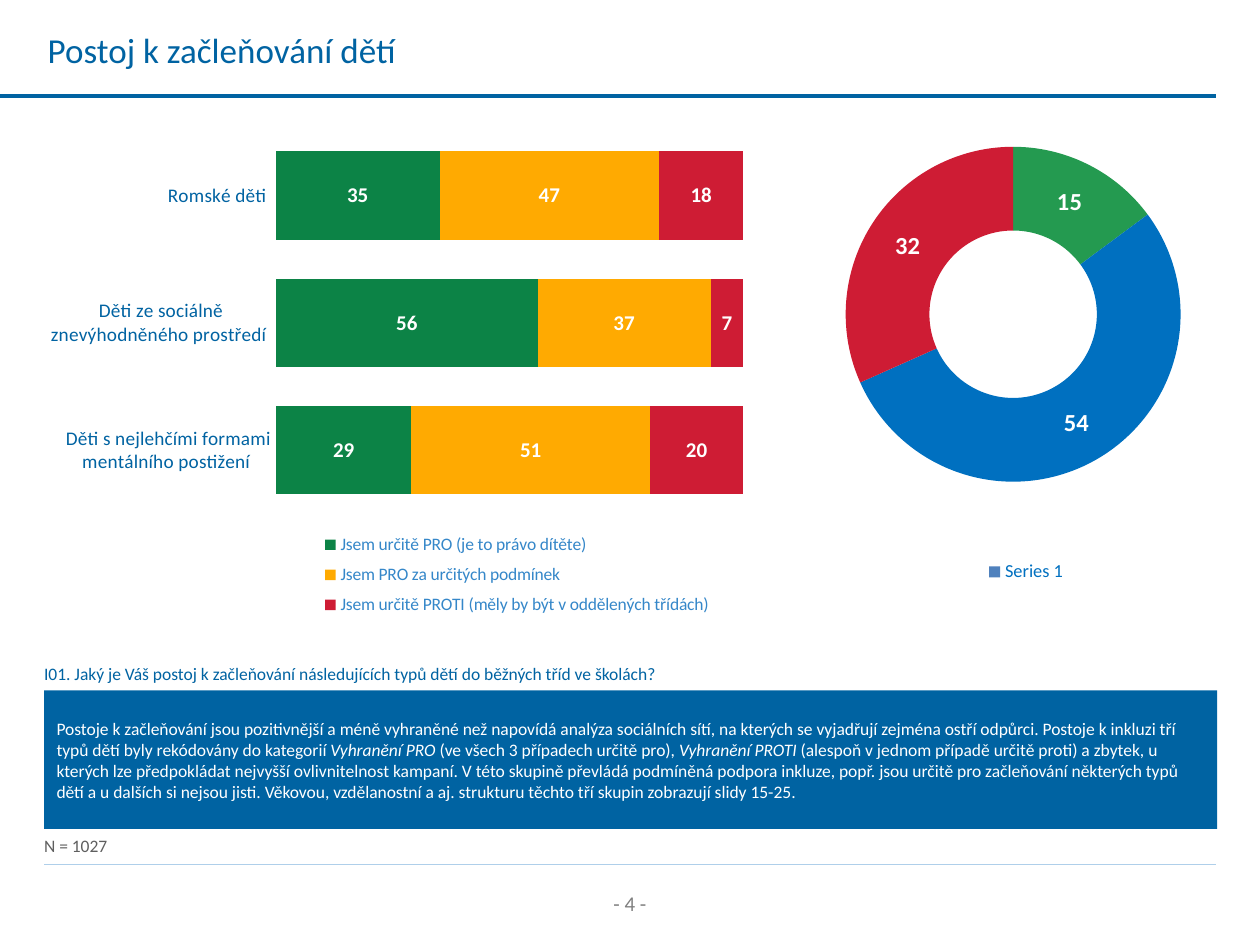
from pptx import Presentation
from pptx.chart.data import CategoryChartData
from pptx.dml.color import RGBColor
from pptx.enum.chart import XL_CHART_TYPE, XL_LABEL_POSITION, XL_LEGEND_POSITION, XL_TICK_MARK
from pptx.enum.shapes import MSO_CONNECTOR, MSO_SHAPE
from pptx.enum.text import MSO_ANCHOR, PP_ALIGN
from pptx.oxml import parse_xml
from pptx.oxml.ns import nsdecls, qn
from pptx.util import Inches, Pt

NAVY = RGBColor(0x00, 0x63, 0xA2)
PALE = RGBColor(0xAF, 0xCF, 0xEA)
SKY = RGBColor(0x35, 0x87, 0xC9)
BLUE = RGBColor(0x00, 0x70, 0xC0)
GREEN = RGBColor(0x0C, 0x83, 0x46)
LIME = RGBColor(0x24, 0x9A, 0x50)
AMBER = RGBColor(0xFF, 0xAA, 0x01)
RED = RGBColor(0xCE, 0x1C, 0x34)
GREY = RGBColor(0x80, 0x80, 0x80)
DARK = RGBColor(0x5F, 0x5F, 0x5F)
WHITE = RGBColor(0xFF, 0xFF, 0xFF)


def write(shape, runs, size, color, align=PP_ALIGN.LEFT, anchor=MSO_ANCHOR.TOP, left=0.1):
    """Fill a shape with one paragraph of (text, italic) runs."""
    frame = shape.text_frame
    frame.word_wrap = True
    frame.vertical_anchor = anchor
    frame.margin_left = Inches(left)
    para = frame.paragraphs[0]
    para.alignment = align
    for text, slant in runs:
        run = para.add_run()
        run.text = text
        font = run.font
        font.name, font.size, font.italic = "Calibri", Pt(size), slant
        font.color.rgb = color


def style(chart, plot_box, key_box, key_size, key_color, label_size):
    """Set fonts, legend, value labels and the inner layout of a chart."""
    chart.has_title = False
    chart.has_legend = True
    legend, plot = chart.legend, chart.plots[0]
    legend.position = XL_LEGEND_POSITION.BOTTOM
    legend.include_in_layout = False
    plot.vary_by_categories = False
    plot.has_data_labels = True
    labels = plot.data_labels
    labels.show_value = True
    labels.number_format = "#,##0"
    labels.number_format_is_linked = False
    for font, size, color, bold in (
        (chart.font, 18, DARK, False),
        (legend.font, key_size, key_color, False),
        (labels.font, label_size, WHITE, True),
    ):
        font.name, font.size, font.bold = "Calibri", Pt(size), bold
        font.color.rgb = color
    root = chart.element if hasattr(chart, "element") else chart._chartSpace
    for tag, spot, box in (("c:plotArea", 0, plot_box), ("c:legend", 1, key_box)):
        part = next(root.iter(qn(tag)))
        for old in part.findall(qn("c:layout")):
            part.remove(old)
        target = '<c:layoutTarget val="inner"/>' if spot == 0 else ""
        modes = '<c:xMode val="edge"/><c:yMode val="edge"/>'
        sizes = "".join(f'<c:{k} val="{v}"/>' for k, v in zip("xywh", box))
        part.insert(spot, parse_xml(
            f'<c:layout {nsdecls("c")}><c:manualLayout>{target}{modes}{sizes}'
            "</c:manualLayout></c:layout>"))


deck = Presentation()
deck.slide_width, deck.slide_height = Inches(10), Inches(7.5)
slide = deck.slides.add_slide(deck.slide_layouts[6])
shapes = slide.shapes

# Rules under the title and above the page number
for x, y, color, width in ((0.35, 6.86, PALE, 0.5), (0, 0.76, NAVY, 2.25)):
    rule = shapes.add_connector(
        MSO_CONNECTOR.STRAIGHT, Inches(x), Inches(y), Inches(9.65), Inches(y))
    rule.line.color.rgb = color
    rule.line.width = Pt(width)
    rule._element.spPr.append(parse_xml(f'<a:effectLst {nsdecls("a")}/>'))

# Title, question, base and page number
question = "I01. Jaký je Váš postoj k začleňování následujících typů dětí do běžných tříd ve školách?"
for box, text, form in (
    ((0.28, 0, 8.92, 0.79), "Postoj k začleňování dětí",
     dict(size=20, color=NAVY, anchor=MSO_ANCHOR.MIDDLE)),
    ((0.35, 5.21, 9.31, 0.27), question, dict(size=10, color=NAVY, left=0)),
    ((0.35, 6.58, 6.79, 0.27), "N = 1027", dict(size=10, color=DARK, left=0)),
    ((4.37, 7.02, 1.26, 0.3), "- 4 -", dict(size=12, color=GREY, align=PP_ALIGN.CENTER)),
):
    write(shapes.add_textbox(*map(Inches, box)), [(text, False)], **form)

# Comment panel
panel = shapes.add_shape(
    MSO_SHAPE.RECTANGLE, Inches(0.35), Inches(5.48), Inches(9.31), Inches(1.1))
panel.shadow.inherit = False
panel.fill.solid()
panel.fill.fore_color.rgb = NAVY
panel.line.fill.background()
write(panel, [
    ("Postoje k začleňování jsou pozitivnější a méně vyhraněné než napovídá analýza "
     "sociálních sítí, na kterých se vyjadřují zejména ostří odpůrci. Postoje k inkluzi "
     "tří typů dětí byly rekódovány do kategorií ", False),
    ("Vyhranění PRO ", True),
    ("(ve všech 3 případech určitě pro), ", False),
    ("Vyhranění PROTI ", True),
    ("(alespoň v jednom případě určitě proti) a zbytek, u kterých lze předpokládat "
     "nejvyšší ovlivnitelnost kampaní. V této skupině převládá podmíněná podpora inkluze, "
     "popř. jsou určitě pro začleňování některých typů dětí a u dalších si nejsou jisti. "
     "Věkovou, vzdělanostní a aj. strukturu těchto tří skupin zobrazují slidy 15-25.", False),
], 10, WHITE, anchor=MSO_ANCHOR.MIDDLE)

# Stacked bars: attitude by type of child
data = CategoryChartData()
data.categories = [
    "Děti s nejlehčími formami mentálního postižení ",
    "Děti ze sociálně znevýhodněného prostředí ",
    "Romské děti ",
]
data.add_series("Jsem určitě PRO (je to právo dítěte)", (29, 56, 35))
data.add_series("Jsem PRO za určitých podmínek", (51, 37, 47))
data.add_series("Jsem určitě PROTI (měly by být v oddělených třídách)", (20, 7, 18))
bars = shapes.add_chart(
    XL_CHART_TYPE.BAR_STACKED_100, Inches(0.28), Inches(0.88),
    Inches(5.62), Inches(4.21), data).chart
style(bars, (0.34, 0.04, 0.66, 0.72), (0.39, 0.78, 0.58, 0.19), 10, SKY, 12)
plot = bars.plots[0]
plot.gap_width, plot.overlap = 44, 100
plot.data_labels.position = XL_LABEL_POSITION.CENTER
for series, color in zip(plot.series, (GREEN, AMBER, RED)):
    series.format.fill.solid()
    series.format.fill.fore_color.rgb = color
cat, val = bars.category_axis, bars.value_axis
cat.major_tick_mark = cat.minor_tick_mark = XL_TICK_MARK.NONE
cat.format.line.fill.background()
font = cat.tick_labels.font
font.name, font.size = "Calibri", Pt(11)
font.color.rgb = NAVY
val.visible = val.has_major_gridlines = False
val.maximum_scale, val.major_unit = 1, 0.2

# Doughnut: three groups
data = CategoryChartData()
data.categories = ["Vyhranění PRO", "Oslovitelní", "Vyhranění PROTI"]
data.add_series("Series 1", (15, 54, 32))
ring = shapes.add_chart(
    XL_CHART_TYPE.DOUGHNUT, Inches(5.79), Inches(0.92),
    Inches(4.13), Inches(4.09), data).chart
style(ring, (0.22, 0.06, 0.65, 0.65), (0.4, 0.78, 0.34, 0.21), 10.5, BLUE, 14)
for i, color in enumerate((LIME, BLUE, RED)):
    fill = ring.plots[0].series[0].points[i].format.fill
    fill.solid()
    fill.fore_color.rgb = color

deck.save("out.pptx")
